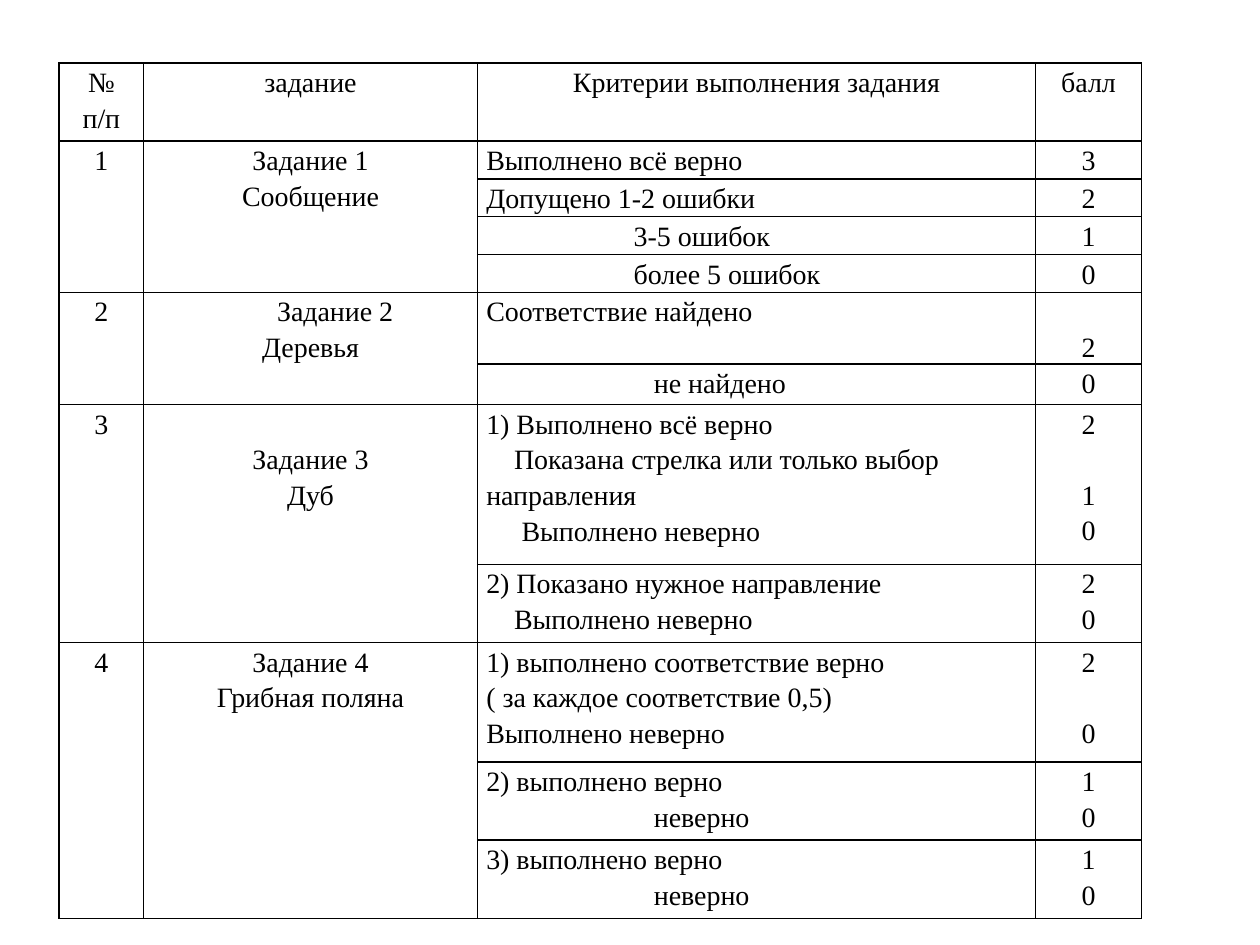
from dataclasses import dataclass

from lxml import etree
from pptx import Presentation
from pptx import util as u
from pptx.dml.color import RGBColor
from pptx.enum import text as t
from pptx.oxml import ns

COLORS = {"ink": "000000", "paper": "FFFFFF"}
FONT = "Times New Roman"
LINE_STEP = 0.28  # inches, one line of text
COLUMN_WIDTHS = [0.67, 2.65, 4.43, 0.84]
HEADERS = ["№ п/п", "задание", "Критерии выполнения задания", "балл"]
HEADER_HEIGHT = 0.62


@dataclass
class Line:
    text: str
    indent: float = 0  # first-line indent in inches
    skip: int = 0  # empty line heights above


@dataclass
class Criterion:
    height: float
    lines: list[Line]
    scores: list[Line]


@dataclass
class Task:
    title: list[Line]
    criteria: list[Criterion]


TASKS = [
    Task([Line("Задание 1"), Line("Сообщение")], [
        Criterion(0.3, [Line("Выполнено всё верно")], [Line("3")]),
        Criterion(0.3, [Line("Допущено 1-2 ошибки")], [Line("2")]),
        Criterion(0.3, [Line("3-5 ошибок", indent=1.17)], [Line("1")]),
        Criterion(0.3, [Line("более 5 ошибок", indent=1.17)], [Line("0")]),
    ]),
    Task([Line("Задание 2", indent=0.39), Line("Деревья")], [
        Criterion(0.57, [Line("Соответствие найдено")], [Line("2", skip=1)]),
        Criterion(0.32, [Line("не найдено", indent=1.33)], [Line("0")]),
    ]),
    Task([Line("Задание 3", skip=1), Line("Дуб")], [
        Criterion(1.27, [
            Line("1) Выполнено всё верно"),
            Line("Показана стрелка или только выбор направления", indent=0.22),
            Line("Выполнено неверно", indent=0.28),
        ], [Line("2"), Line("1", skip=1), Line("0")]),
        Criterion(0.62, [
            Line("2) Показано нужное направление"),
            Line("Выполнено неверно", indent=0.22),
        ], [Line("2"), Line("0")]),
    ]),
    Task([Line("Задание 4"), Line("Грибная поляна")], [
        Criterion(0.95, [
            Line("1) выполнено соответствие верно"),
            Line("( за каждое соответствие 0,5)"),
            Line("Выполнено неверно"),
        ], [Line("2"), Line("0", skip=1)]),
        *[
            Criterion(0.62, [
                Line(f"{number}) выполнено верно"),
                Line("неверно", indent=1.33),
            ], [Line("1"), Line("0")])
            for number in (2, 3)
        ],
    ]),
]


def format_cell(cell) -> None:
    """Give the cell thin borders, a plain fill and narrow margins."""
    properties = cell._tc.get_or_add_tcPr()
    for side in ("a:lnL", "a:lnR", "a:lnT", "a:lnB"):
        border = etree.SubElement(properties, ns.qn(side), w=str(u.Pt(1)))
        fill = etree.SubElement(border, ns.qn("a:solidFill"))
        etree.SubElement(fill, ns.qn("a:srgbClr"), val=COLORS["ink"])
    cell.fill.solid()
    cell.fill.fore_color.rgb = RGBColor.from_string(COLORS["paper"])
    cell.margin_left = cell.margin_right = u.Inches(0.07)
    cell.margin_top = cell.margin_bottom = 0


def write_lines(cell, lines: list[Line], *, centered: bool = True,
                size: float = 16, color: str = "ink") -> None:
    """Write one paragraph per line; a skip above the first is a cell margin."""
    cell.margin_top = u.Inches(lines[0].skip * LINE_STEP)
    frame = cell.text_frame
    for index, line in enumerate(lines):
        paragraph = frame.add_paragraph() if index else frame.paragraphs[0]
        paragraph.alignment = t.PP_ALIGN.CENTER if centered else t.PP_ALIGN.LEFT
        paragraph.line_spacing = 1.15
        if index and line.skip:
            paragraph.space_before = u.Inches(line.skip * LINE_STEP)
        if line.indent:
            attributes = paragraph._p.get_or_add_pPr()
            attributes.set("marL", "0")
            attributes.set("indent", str(u.Inches(line.indent)))
        run = paragraph.add_run()
        run.text = line.text
        run.font.name = FONT
        run.font.size = u.Pt(size)
        run.font.color.rgb = RGBColor.from_string(COLORS[color])


def add_score_table(slide) -> None:
    heights = [HEADER_HEIGHT] + [
        criterion.height for task in TASKS for criterion in task.criteria
    ]
    table = slide.shapes.add_table(
        len(heights), len(COLUMN_WIDTHS), u.Inches(0.47), u.Inches(0.5),
        u.Inches(sum(COLUMN_WIDTHS)), u.Inches(sum(heights)),
    ).table
    table.first_row = table.horz_banding = False
    for column, width in zip(table.columns, COLUMN_WIDTHS):
        column.width = u.Inches(width)
    for row, height in zip(table.rows, heights):
        row.height = u.Inches(height)
    for cell in table.iter_cells():
        format_cell(cell)

    for column, header in enumerate(HEADERS):
        write_lines(table.cell(0, column), [Line(header)])
    row = 1
    for number, task in enumerate(TASKS, start=1):
        last_row = row + len(task.criteria) - 1
        for column, lines in enumerate(([Line(str(number))], task.title)):
            table.cell(row, column).merge(table.cell(last_row, column))
            write_lines(table.cell(row, column), lines)
        for criterion in task.criteria:
            write_lines(table.cell(row, 2), criterion.lines, centered=False)
            write_lines(table.cell(row, 3), criterion.scores)
            row += 1


def main() -> None:
    presentation = Presentation()
    presentation.slide_width = u.Inches(10)
    presentation.slide_height = u.Inches(7.5)
    slide = presentation.slides.add_slide(presentation.slide_layouts[6])
    add_score_table(slide)
    presentation.save("out.pptx")


if __name__ == "__main__":
    main()
